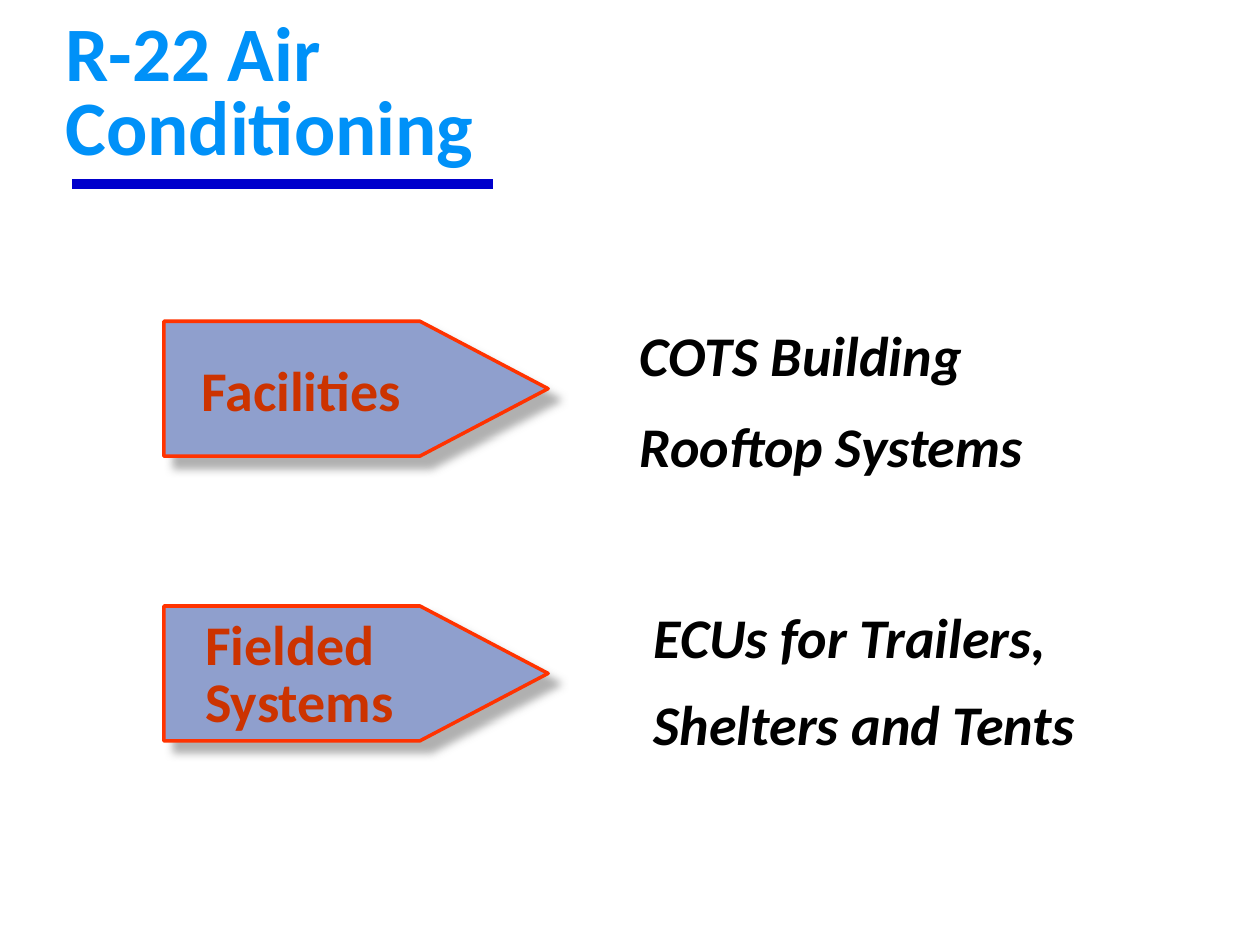
from lxml import etree
from pptx import Presentation
from pptx.dml.color import RGBColor
from pptx.enum.shapes import MSO_CONNECTOR, MSO_SHAPE
from pptx.enum.text import MSO_ANCHOR, MSO_AUTO_SIZE, PP_ALIGN
from pptx.oxml import parse_xml
from pptx.oxml.ns import nsdecls, qn
from pptx.util import Inches, Pt

STRAIGHT = MSO_CONNECTOR.STRAIGHT
PENTAGON = MSO_SHAPE.PENTAGON
TOP, BOTTOM = MSO_ANCHOR.TOP, MSO_ANCHOR.BOTTOM
NO_FIT = MSO_AUTO_SIZE.NONE
LEFT = PP_ALIGN.LEFT

COLORS = {
    "title": "0091F8", "rule": "0000CC", "arrow": "8F9FCD",
    "outline": "FF3300", "label": "CC3300", "detail": "000000",
    "shadow": "969696",
}
TITLE = "R-22 Air\vConditioning"
TITLE_AREA = (0.42, 0.19, 8.5, 1.21)
RULE = (0.57, 1.46, 3.91, 1.46)
ARROW_LEFT, ARROW_WIDTH, ARROW_HEIGHT = 1.3, 3.05, 1.07
ROWS = [
    {
        "top": 2.55,
        "label": ("Facilities",), "label_area": (1.5, 2.77, 2.44, 0.63),
        "label_spacing": 1.0,
        "details": ("COTS Building", "Rooftop Systems"),
        "detail_area": (4.98, 2.64, 4.67, 1.11), "detail_spacing": 0.7,
    },
    {
        "top": 4.81,
        "label": ("Fielded Systems",), "label_area": (1.53, 4.87, 2.32, 1.01),
        "label_spacing": 0.85,
        "details": ("ECUs for Trailers,", "Shelters and Tents"),
        "detail_area": (5.09, 4.9, 4.41, 1.06), "detail_spacing": 0.65,
    },
]
TITLE_FONT = {"name": "Calibri", "size": Pt(44), "bold": True}
LABEL_FONT = {"name": "Calibri", "size": Pt(32), "bold": True}
DETAIL_FONT = {**LABEL_FONT, "italic": True}


def color(name):
    return RGBColor.from_string(COLORS[name])


def write(box, lines, font, color_name, spacing, anchor=TOP):
    frame = box.text_frame
    frame.word_wrap = True
    frame.auto_size = NO_FIT
    frame.vertical_anchor = anchor
    for index, line in enumerate(lines):
        para = frame.paragraphs[0] if index == 0 else frame.add_paragraph()
        para.text = line
        para.alignment = LEFT
        para.line_spacing = spacing
        para.space_before = Pt(25 if index else 0)
        for span in para.runs:
            for name, value in font.items():
                setattr(span.font, name, value)
            span.font.color.rgb = color(color_name)


def add_text(page, area, *content):
    write(page.shapes.add_textbox(*map(Inches, area)), *content)


def add_arrow(page, top):
    arrow = page.shapes.add_shape(
        PENTAGON, *map(Inches, (ARROW_LEFT, top, ARROW_WIDTH, ARROW_HEIGHT)))
    arrow.adjustments[0] = 0.95
    arrow.fill.solid()
    arrow.fill.fore_color.rgb = color("arrow")
    arrow.line.color.rgb = color("outline")
    arrow.line.width = Pt(2)
    arrow.shadow.inherit = False
    effects = arrow.element.spPr.find(qn("a:effectLst"))
    effects.append(parse_xml(
        f'<a:outerShdw {nsdecls("a")} blurRad="{Pt(5)}" dist="{Pt(8.5)}" '
        f'dir="2700000" algn="ctr" rotWithShape="0">'
        f'<a:srgbClr val="{COLORS["shadow"]}"><a:alpha val="75000"/></a:srgbClr>'
        f'</a:outerShdw>'))


def add_rule(page):
    rule = page.shapes.add_connector(STRAIGHT, *map(Inches, RULE))
    rule.line.color.rgb = color("rule")
    rule.line.width = Pt(6)
    etree.SubElement(rule.element.spPr, qn("a:effectLst"))


def main():
    deck = Presentation()
    deck.slide_width, deck.slide_height = Inches(10), Inches(7.5)
    page = deck.slides.add_slide(deck.slide_layouts[5])
    title = page.shapes.title
    title.left, title.top, title.width, title.height = map(Inches, TITLE_AREA)
    write(title, [TITLE], TITLE_FONT, "title", 0.8, BOTTOM)
    for row in ROWS:
        add_arrow(page, row["top"])
        add_text(page, row["label_area"], row["label"], LABEL_FONT,
                 "label", row["label_spacing"])
        add_text(page, row["detail_area"], row["details"], DETAIL_FONT,
                 "detail", row["detail_spacing"])
    add_rule(page)
    deck.save("out.pptx")


if __name__ == "__main__":
    main()
